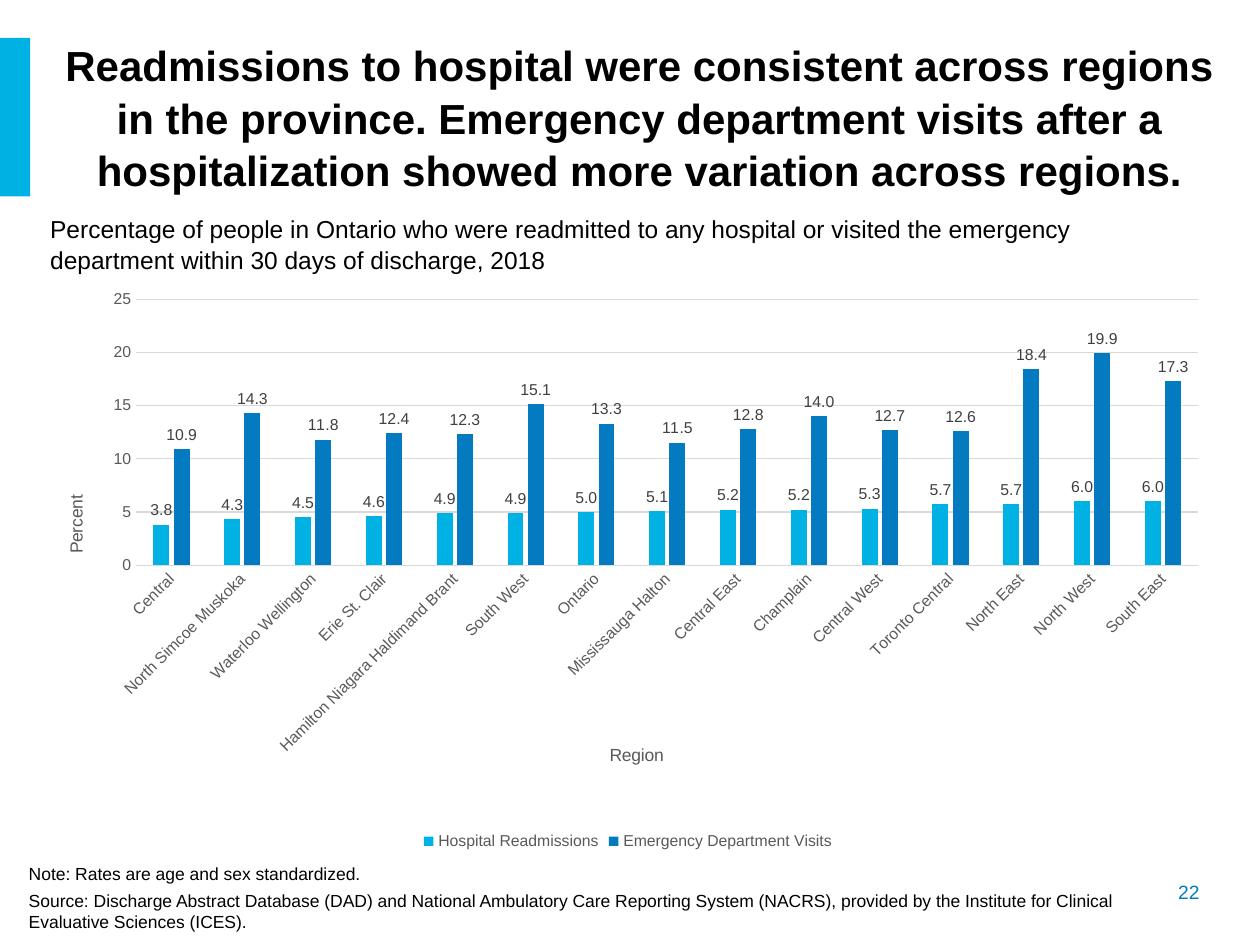
import pptx
import pptx.chart.data
import pptx.dml.color
import pptx.enum.chart
import pptx.enum.dml
import pptx.enum.shapes
import pptx.enum.text
import pptx.oxml
import pptx.oxml.ns
import pptx.util

Inches = pptx.util.Inches
Pt = pptx.util.Pt
qn = pptx.oxml.ns.qn
ALIGN = pptx.enum.text.PP_ALIGN
ANCHOR = pptx.enum.text.MSO_ANCHOR

CYAN, BLUE = "00B2E3", "047BC1"
BLACK, WHITE, GRAY, LABEL_GRAY, GRID_GRAY = "000000", "FFFFFF", "595959", "404040", "D9D9D9"

RATES = [
    ("Central", 3.8, 10.9),
    ("North Simcoe Muskoka", 4.3, 14.3),
    ("Waterloo Wellington", 4.5, 11.8),
    ("Erie St. Clair", 4.6, 12.4),
    ("Hamilton Niagara Haldimand Brant", 4.9, 12.3),
    ("South West", 4.9, 15.1),
    ("Ontario", 5.0, 13.3),
    ("Mississauga Halton", 5.1, 11.5),
    ("Central East", 5.2, 12.8),
    ("Champlain", 5.2, 14.0),
    ("Central West", 5.3, 12.7),
    ("Toronto Central", 5.7, 12.6),
    ("North East", 5.7, 18.4),
    ("North West", 6.0, 19.9),
    ("South East", 6.0, 17.3),
]


def rgb(value):
    return pptx.dml.color.RGBColor.from_string(value)


def apply(target, values):
    for name, value in values.items():
        setattr(target, name, value)


def style_font(font, size, color, bold=False):
    apply(font, {"name": "Arial", "size": Pt(size), "bold": bold})
    font.color.rgb = rgb(color)


def fill_solid(fill, color):
    fill.solid()
    fill.fore_color.rgb = rgb(color)


def style_line(line, color, width):
    line.color.rgb = rgb(color)
    line.width = Pt(width)


def write(frame, paragraphs, size, color=BLACK, bold=False, anchor=ANCHOR.TOP, **layout):
    apply(frame, {"word_wrap": True, "vertical_anchor": anchor})
    for index, text in enumerate(paragraphs):
        paragraph = frame.add_paragraph() if index else frame.paragraphs[0]
        apply(paragraph, {"line_spacing": 1.04, **layout})
        run = paragraph.add_run()
        run.text = text
        style_font(run.font, size, color, bold)


def add_text(slide, box, paragraphs, size, **options):
    frame = slide.shapes.add_textbox(*map(Inches, box)).text_frame
    write(frame, paragraphs, size, **options)


def add_rectangle(slide, box):
    rectangle = slide.shapes.add_shape(
        pptx.enum.shapes.MSO_SHAPE.RECTANGLE, *map(Inches, box))
    rectangle.shadow.inherit = False
    return rectangle


def add_heading(slide, text):
    accent = add_rectangle(slide, (0, 0.3, 0.24, 1.26))
    fill_solid(accent.fill, CYAN)
    accent.line.fill.background()
    heading = add_rectangle(slide, (0.3, 0.27, 9.55, 1.31))
    heading.fill.background()
    style_line(heading.line, WHITE, 2.5)
    heading.line.dash_style = pptx.enum.dml.MSO_LINE.ROUND_DOT
    write(heading.text_frame, [text], 24, bold=True, anchor=ANCHOR.MIDDLE, alignment=ALIGN.CENTER)


def place(element, index, settings):
    for old in element.findall(qn("c:layout")):
        element.remove(old)
    parts = "".join(f'<c:{name} val="{value}"/>' for name, value in settings.items())
    element.insert(index, pptx.oxml.parse_xml(
        f'<c:layout {pptx.oxml.ns.nsdecls("c")}><c:manualLayout>{parts}'
        "</c:manualLayout></c:layout>"))


def style_axis(axis, title, x, y, title_angle):
    apply(axis, {
        "major_tick_mark": pptx.enum.chart.XL_TICK_MARK.NONE,
        "minor_tick_mark": pptx.enum.chart.XL_TICK_MARK.NONE,
    })
    style_font(axis.tick_labels.font, 9, GRAY)
    frame = axis.axis_title.text_frame
    frame.text = title
    style_font(frame.paragraphs[0].runs[0].font, 10, GRAY)
    rotate(axis.axis_title._element, title_angle)
    place(axis.axis_title._element, 1, {"xMode": "edge", "yMode": "edge", "x": x, "y": y})


def rotate(element, degrees):
    body = next(element.iter(qn("a:bodyPr")))
    body.set("rot", str(degrees * 60000))
    body.set("vert", "horz")


def style_series(series, color):
    fill_solid(series.format.fill, color)
    series.invert_if_negative = False
    labels = series.data_labels
    apply(labels, {
        "show_value": True,
        "number_format": "#,##0.0",
        "number_format_is_linked": False,
        "position": pptx.enum.chart.XL_LABEL_POSITION.OUTSIDE_END,
    })
    style_font(labels.font, 9, LABEL_GRAY)


def add_rates_chart(slide):
    regions, readmissions, visits = zip(*RATES)
    rates = pptx.chart.data.CategoryChartData()
    rates.categories = regions
    rates.add_series("Hospital Readmissions", readmissions)
    rates.add_series("Emergency Department Visits ", visits)
    chart = slide.shapes.add_chart(
        pptx.enum.chart.XL_CHART_TYPE.COLUMN_CLUSTERED,
        *map(Inches, (0.3, 2.21, 9.4, 4.58)), rates).chart
    apply(chart, {"has_title": False, "has_legend": True})
    style_font(chart.font, 10, BLACK)
    apply(chart.legend, {
        "position": pptx.enum.chart.XL_LEGEND_POSITION.BOTTOM, "include_in_layout": False})
    style_font(chart.legend.font, 9, GRAY)

    plot = chart.plots[0]
    apply(plot, {"gap_width": 219, "overlap": -27, "vary_by_categories": False})
    for series, color in zip(plot.series, (CYAN, BLUE)):
        style_series(series, color)

    region_axis, percent_axis = chart.category_axis, chart.value_axis
    style_axis(region_axis, "Region", 0.48, 0.8, 0)
    style_line(region_axis.format.line, GRID_GRAY, 0.75)
    rotate(region_axis._element.find(qn("c:txPr")), -45)
    style_axis(percent_axis, "Percent", 0.02, 0.37, -90)
    apply(percent_axis, {"minimum_scale": 0, "maximum_scale": 25, "major_unit": 5})
    apply(percent_axis.tick_labels, {
        "number_format": "#,##0", "number_format_is_linked": False})
    percent_axis.format.line.fill.background()
    style_line(percent_axis.major_gridlines.format.line, GRID_GRAY, 0.75)
    place(chart._chartSpace.chart.plotArea, 0, {
        "layoutTarget": "inner", "xMode": "edge", "yMode": "edge",
        "x": 0.083, "y": 0.036, "w": 0.897, "h": 0.461})


def main():
    deck = pptx.Presentation()
    apply(deck, {"slide_width": Inches(10), "slide_height": Inches(7.5)})
    slide = deck.slides.add_slide(deck.slide_layouts[6])
    add_text(slide, (8.45, 6.93, 1.17, 0.29), ["22"], 11, color=BLUE,
             anchor=ANCHOR.MIDDLE, alignment=ALIGN.RIGHT)
    add_heading(slide, "Readmissions to hospital were consistent across regions in the "
                "province. Emergency department visits after a hospitalization showed "
                "more variation across regions.")
    add_text(slide, (0.3, 1.64, 8.9, 0.57), [
        "Percentage of people in Ontario who were readmitted to any hospital or visited "
        "the emergency department within 30 days of discharge, 2018"], 14)
    add_text(slide, (0.13, 6.79, 8.9, 0.66), [
        "Note: Rates are age and sex standardized.",
        "Source: Discharge Abstract Database (DAD) and National Ambulatory Care Reporting "
        "System (NACRS), provided by the Institute for Clinical Evaluative Sciences (ICES).",
    ], 10, space_before=Pt(3))
    add_rates_chart(slide)
    deck.save("out.pptx")


if __name__ == "__main__":
    main()
